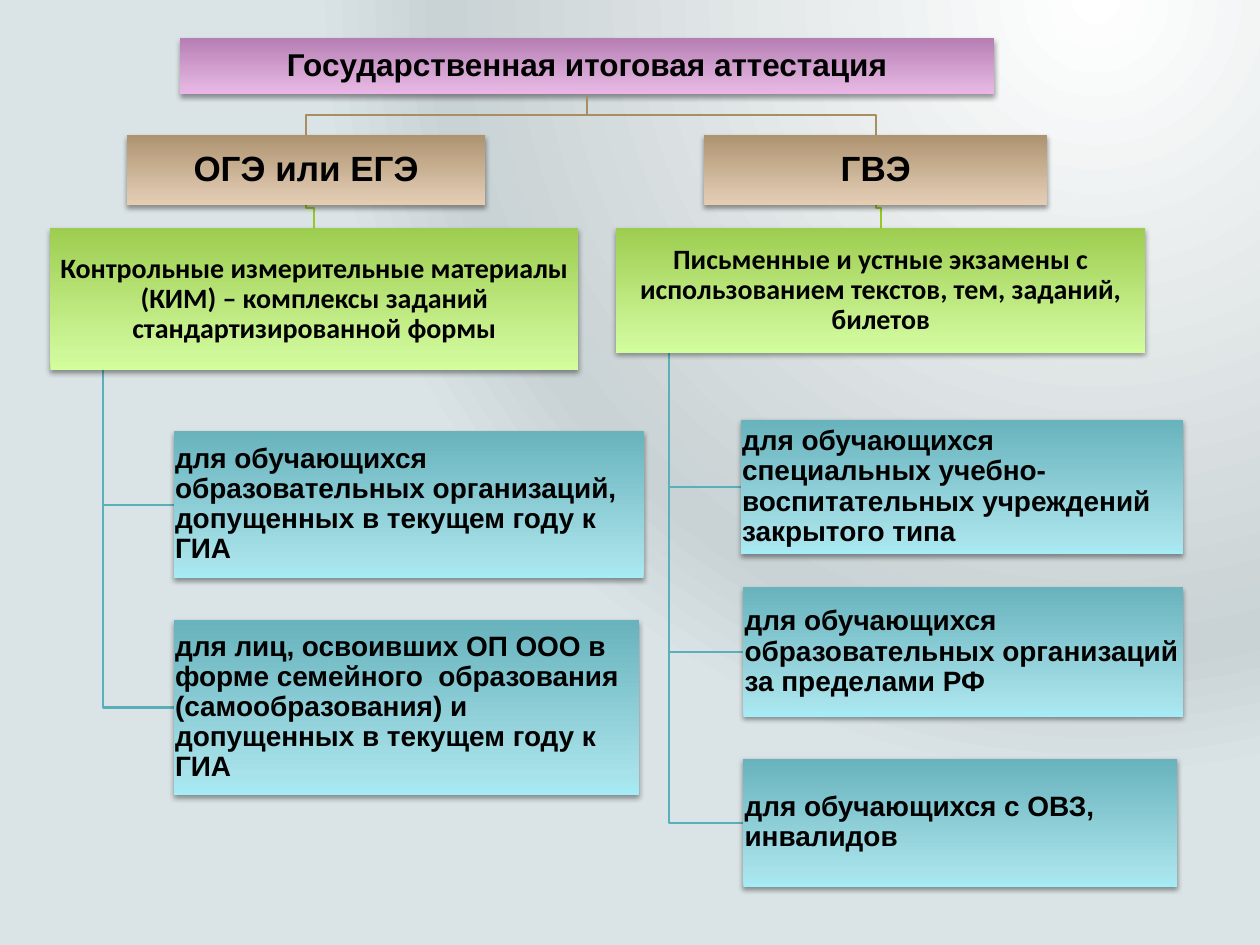
from collections import namedtuple

from lxml import etree
from pptx import Presentation
from pptx.dml.color import RGBColor
from pptx.enum.shapes import MSO_SHAPE
from pptx.enum.text import MSO_ANCHOR, MSO_AUTO_SIZE, PP_ALIGN
from pptx.oxml.ns import qn
from pptx.util import Inches, Pt

RECT = MSO_SHAPE.RECTANGLE
MIDDLE = MSO_ANCHOR.MIDDLE
NO_FIT = MSO_AUTO_SIZE.NONE
LEFT, CENTER = PP_ALIGN.LEFT, PP_ALIGN.CENTER

COLS, ROWS = 100, 75
CELL = Inches(0.1)
TITLE_ONLY = 5

COLORS = {
    "text": "000000",
    "topic_line": "A98D63",
    "detail_line": "98C723",
    "item_line": "59B0B9",
}
GRADIENTS = {
    "slide": {0: "FFFFFF", 83: "C9D2D4", 100: "DAE3E5"},
    "root": {0: "EDB4EA", 12: "E3B4E0", 100: "B67EB3"},
    "topic": {0: "E8CDAE", 12: "DEC8AF", 100: "AE9370"},
    "detail": {0: "D3FF9A", 12: "CEF799", 100: "9DCD50"},
    "item": {0: "A4ECF6", 12: "A7E1E9", 100: "68B3BD"},
}
UPWARD = '<a:lin ang="16200000" scaled="0"/>'
RADIAL = ('<a:path path="circle">'
          '<a:fillToRect l="75000" t="100000" b="300000"/></a:path>')
NS = 'xmlns:a="http://schemas.openxmlformats.org/drawingml/2006/main"'
SHADOW = (f'<a:effectLst {NS}><a:outerShdw blurRad="39370" dist="20320" '
          'dir="5400000" rotWithShape="0"><a:srgbClr val="000000">'
          '<a:alpha val="38000"/></a:srgbClr></a:outerShdw></a:effectLst>')


class Box(namedtuple("Box", "x y w h")):
    """A rectangle in grid columns and rows."""

    @property
    def center(self):
        return self.x + self.w / 2

    @property
    def middle(self):
        return self.y + self.h / 2

    @property
    def bottom(self):
        return self.y + self.h

    def shifted(self, x, y):
        return Box(self.x + x, self.y + y, self.w, self.h)


def grid(v):
    return round(v * CELL)


def gradient(name, direction):
    stops = "".join(
        f'<a:gs pos="{pos * 1000}"><a:srgbClr val="{color}"/></a:gs>'
        for pos, color in GRADIENTS[name].items())
    return etree.fromstring(f'<a:gradFill {NS} rotWithShape="1"><a:gsLst>{stops}'
                            f'</a:gsLst>{direction}</a:gradFill>')


def add_text(sp, text, size=16, font="Arial", align=LEFT):
    tf = sp.text_frame
    tf.word_wrap, tf.auto_size, tf.vertical_anchor = True, NO_FIT, MIDDLE
    tf.margin_left = tf.margin_right = Inches(0.01)
    tf.margin_top = tf.margin_bottom = Inches(0.01)
    p = tf.paragraphs[0]
    p.alignment, p.line_spacing = align, 0.9
    r = p.add_run()
    r.text = text
    r.font.size, r.font.name, r.font.bold = Pt(size), font, True
    r.font.color.rgb = RGBColor.from_string(COLORS["text"])


def add_box(s, box, kind, text, sp=None, **text_format):
    """Format sp, or a new rectangle, as a shaded box with text."""
    sp = sp or s.shapes.add_shape(RECT, 0, 0, 0, 0)
    sp.left, sp.top, sp.width, sp.height = map(grid, box)
    sp.line.fill.background()
    sp.fill.solid()
    props = sp.element.spPr
    props.replace(props.find(qn("a:solidFill")), gradient(kind, UPWARD))
    props.append(etree.fromstring(SHADOW))
    add_text(sp, text, **text_format)


def add_line(s, color, *points):
    (x, y), *rest = [(grid(px), grid(py)) for px, py in points]
    builder = s.shapes.build_freeform(x, y)
    builder.add_line_segments(rest, close=False)
    sp = builder.convert_to_shape()
    sp.fill.background()
    sp.line.color.rgb = RGBColor.from_string(COLORS[color])
    sp.line.width = Pt(1.25)
    sp.shadow.inherit = False


def link_down(s, color, upper, lower, drop):
    """Join two boxes with an elbow that turns drop rows below the upper one."""
    turn = upper.bottom + drop
    add_line(s, color, (upper.center, upper.bottom), (upper.center, turn),
             (lower.center, turn), (lower.center, lower.y))


def add_branch(s, root, origin, topic, detail, items):
    """Each part is a Box relative to origin, with its text."""
    def place(part):
        return part[0].shifted(*origin), part[1]

    (topic_box, topic_text), (detail_box, detail_text) = map(place, (topic, detail))
    items = [place(item) for item in items]
    trunk = detail_box.x + detail_box.w / 10
    for box, _ in items:
        add_line(s, "item_line", (trunk, detail_box.bottom),
                 (trunk, box.middle), (box.x, box.middle))
    link_down(s, "detail_line", topic_box, detail_box, 0.2)
    link_down(s, "topic_line", root, topic_box, 1.6)

    add_box(s, topic_box, "topic", topic_text, size=20, align=CENTER)
    add_box(s, detail_box, "detail", detail_text, font="Calibri", align=CENTER)
    for box, text in items:
        add_box(s, box, "item", text)


def set_background(s):
    s.background.fill.solid()
    props = s.element.find(".//" + qn("p:bgPr"))
    props.replace(props[0], gradient("slide", RADIAL))


def main():
    prs = Presentation()
    prs.slide_width, prs.slide_height = grid(COLS), grid(ROWS)
    s = prs.slides.add_slide(prs.slide_layouts[TITLE_ONLY])
    set_background(s)

    root = Box(14.3, 3, 64.6, 4.5)
    add_box(s, root, "root", "Государственная итоговая аттестация",
            sp=s.shapes.title, size=18, align=CENTER)
    add_branch(
        s, root, (4, 10.7),
        (Box(6.1, 0, 28.4, 5.6), "ОГЭ или ЕГЭ"),
        (Box(0, 7.4, 41.9, 11.3),
         "Контрольные измерительные материалы (КИМ) – комплексы заданий "
         "стандартизированной формы"),
        [(Box(9.8, 23.5, 37.3, 11.7),
          "для обучающихся образовательных организаций, допущенных "
          "в текущем году к ГИА"),
         (Box(9.8, 38.5, 36.9, 13.9),
          "для лиц, освоивших ОП ООО в форме семейного  образования "
          "(самообразования) и допущенных в текущем году к ГИА")])
    add_branch(
        s, root, (48.9, 10.7),
        (Box(7, 0, 27.2, 5.6), "ГВЭ"),
        (Box(0, 7.4, 42, 9.9),
         "Письменные и устные экзамены с использованием текстов, тем, "
         "заданий, билетов"),
        [(Box(9.9, 22.6, 35.1, 10.7),
          "для обучающихся специальных учебно-воспитательных учреждений "
          "закрытого типа"),
         (Box(10.1, 35.9, 34.9, 10.3),
          "для обучающихся образовательных организаций за пределами РФ"),
         (Box(10.1, 49.5, 34.4, 10.2), "для обучающихся с ОВЗ, инвалидов")])
    prs.save("out.pptx")


if __name__ == "__main__":
    main()
